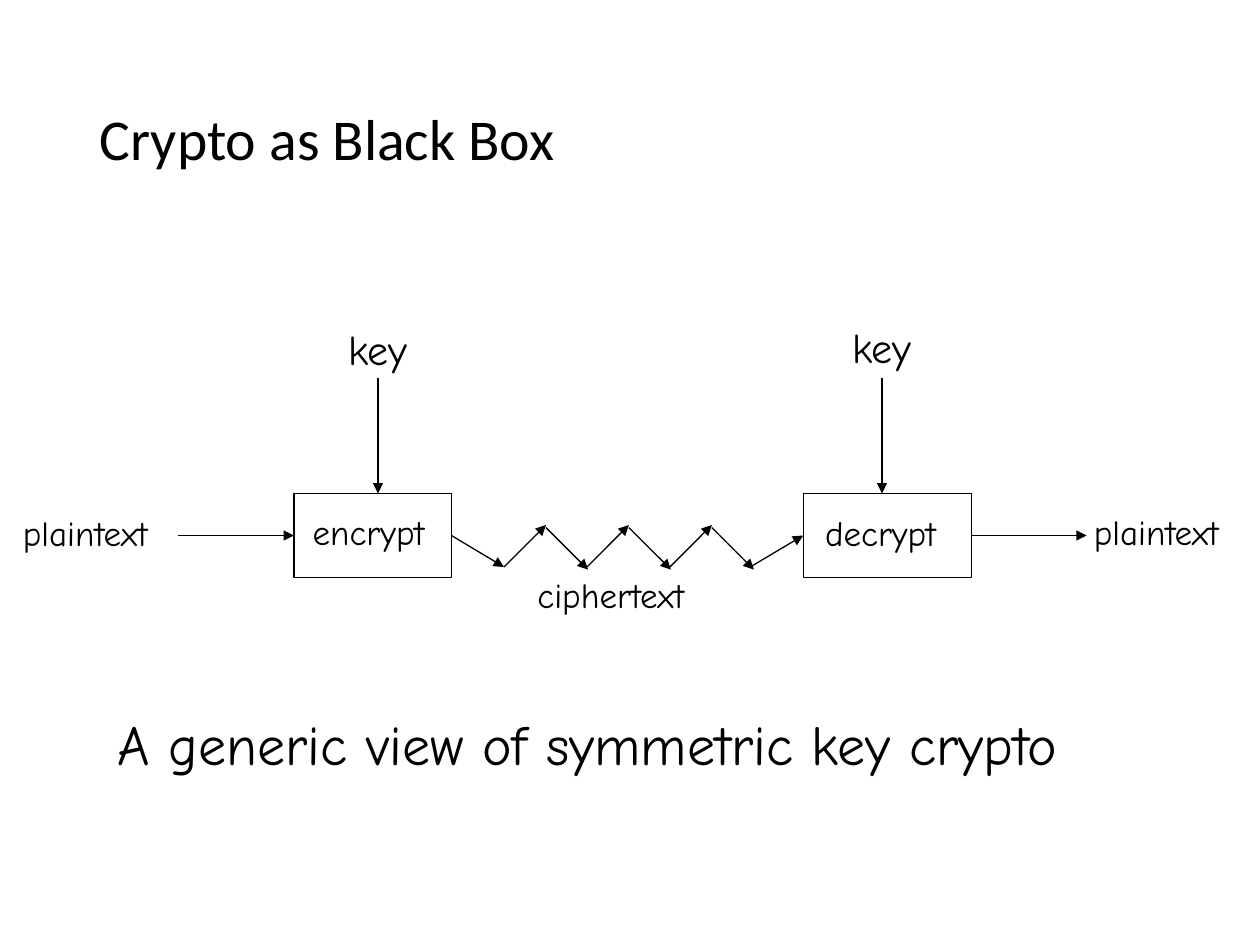
from dataclasses import dataclass

from lxml import etree
from pptx import Presentation
from pptx.dml.color import RGBColor
from pptx.enum.shapes import MSO_CONNECTOR, MSO_SHAPE
from pptx.enum.text import MSO_ANCHOR, MSO_AUTO_SIZE, PP_ALIGN
from pptx.oxml.ns import qn
from pptx.util import Inches, Pt

LINE = MSO_CONNECTOR.STRAIGHT
RECT = MSO_SHAPE.RECTANGLE
MID = MSO_ANCHOR.MIDDLE
GROW = MSO_AUTO_SIZE.SHAPE_TO_FIT_TEXT
FIXED = MSO_AUTO_SIZE.NONE
LEFT = PP_ALIGN.LEFT


@dataclass(frozen=True)
class Theme:
    ink: RGBColor = RGBColor(0, 0, 0)
    head: str = "Calibri"
    body: str = "Comic Neue"
    title: int = 33
    note: int = 32
    key: int = 24
    label: int = 20
    rule: float = 0.75


THEME = Theme()
WIDE, HIGH = 10, 7.5
COLS = 120
UNIT = WIDE / COLS


def grid(*cells):
    return [Inches(cell * UNIT) for cell in cells]


def style(para, size, face):
    para.alignment = LEFT
    para.font.size = Pt(size)
    para.font.name = face
    para.font.color.rgb = THEME.ink


def add_title(slide, text, area):
    title = slide.shapes.title
    title.left, title.top, title.width, title.height = grid(*area)
    frame = title.text_frame
    frame.text = text
    frame.vertical_anchor = MID
    frame.auto_size = FIXED
    para = frame.paragraphs[0]
    para.line_spacing = 0.9
    style(para, THEME.title, THEME.head)


def add_label(slide, text, area, size, wrap=True):
    frame = slide.shapes.add_textbox(*grid(*area)).text_frame
    frame.text = text
    frame.word_wrap = wrap
    frame.auto_size = GROW
    style(frame.paragraphs[0], size, THEME.body)


def add_box(slide, area):
    box = slide.shapes.add_shape(RECT, *grid(*area))
    box.shadow.inherit = False
    box.fill.background()
    box.line.color.rgb = THEME.ink
    box.line.width = Pt(THEME.rule)


def add_arrow(slide, start, end):
    arrow = slide.shapes.add_connector(LINE, *grid(*start, *end))
    arrow.line.color.rgb = THEME.ink
    arrow.line.width = Pt(THEME.rule)
    props = arrow._element.spPr
    etree.SubElement(props.find(qn("a:ln")), qn("a:tailEnd"), type="triangle")
    etree.SubElement(props, qn("a:effectLst"))


def add_zigzag(slide, left, right, mid):
    first, pitch, count, rise = 48, 7.9, 3, 4
    low, high = mid + 3, mid - 1
    drop = 0.25
    add_arrow(slide, (left, mid), (first, low))
    for step in range(count):
        foot = first + step * pitch
        peak = foot + rise
        add_arrow(slide, (foot, low), (peak, high))
        add_arrow(slide, (peak, high + drop), (peak + rise, low + drop))
    add_arrow(slide, (first + count * pitch - drop, low), (right, mid))


def main():
    deck = Presentation()
    deck.slide_width, deck.slide_height = Inches(WIDE), Inches(HIGH)
    slide = deck.slides.add_slide(deck.slide_layouts[5])
    add_title(slide, "Crypto as Black Box", (8.3, 4.8, 103.4, 17.4))

    top, mid, tall, reach = 47, 51, 8, 11
    boxes = ((28, 15), (76.5, 16))
    for left, width in boxes:
        add_box(slide, (left, top, width, tall))
    enter, leave = boxes[0][0], sum(boxes[1])
    add_arrow(slide, (enter - reach, mid), (enter, mid))
    add_arrow(slide, (leave, mid), (leave + reach, mid))
    for x in (36, 84):
        add_arrow(slide, (x, top - reach), (x, top))
    add_zigzag(slide, sum(boxes[0]), boxes[1][0], mid)

    labels = (
        ("plaintext", (1, 48.1, 17, 5.9), THEME.label, True),
        ("plaintext", (103, 48, 17, 5.9), THEME.label, True),
        ("ciphertext", (50, 54, 20, 5.9), THEME.label, True),
        ("key", (32, 30.2, 10.8, 6.8), THEME.key, True),
        ("key", (80, 30, 11, 6.8), THEME.key, True),
        ("encrypt", (28.6, 48, 14.4, 5.9), THEME.label, False),
        ("decrypt", (77.4, 48.1, 14.6, 5.9), THEME.label, False),
        ("A generic view of symmetric key crypto",
         (10, 67, 102.5, 7.7), THEME.note, False),
    )
    for text, area, size, wrap in labels:
        add_label(slide, text, area, size, wrap)
    deck.save("out.pptx")


if __name__ == "__main__":
    main()
